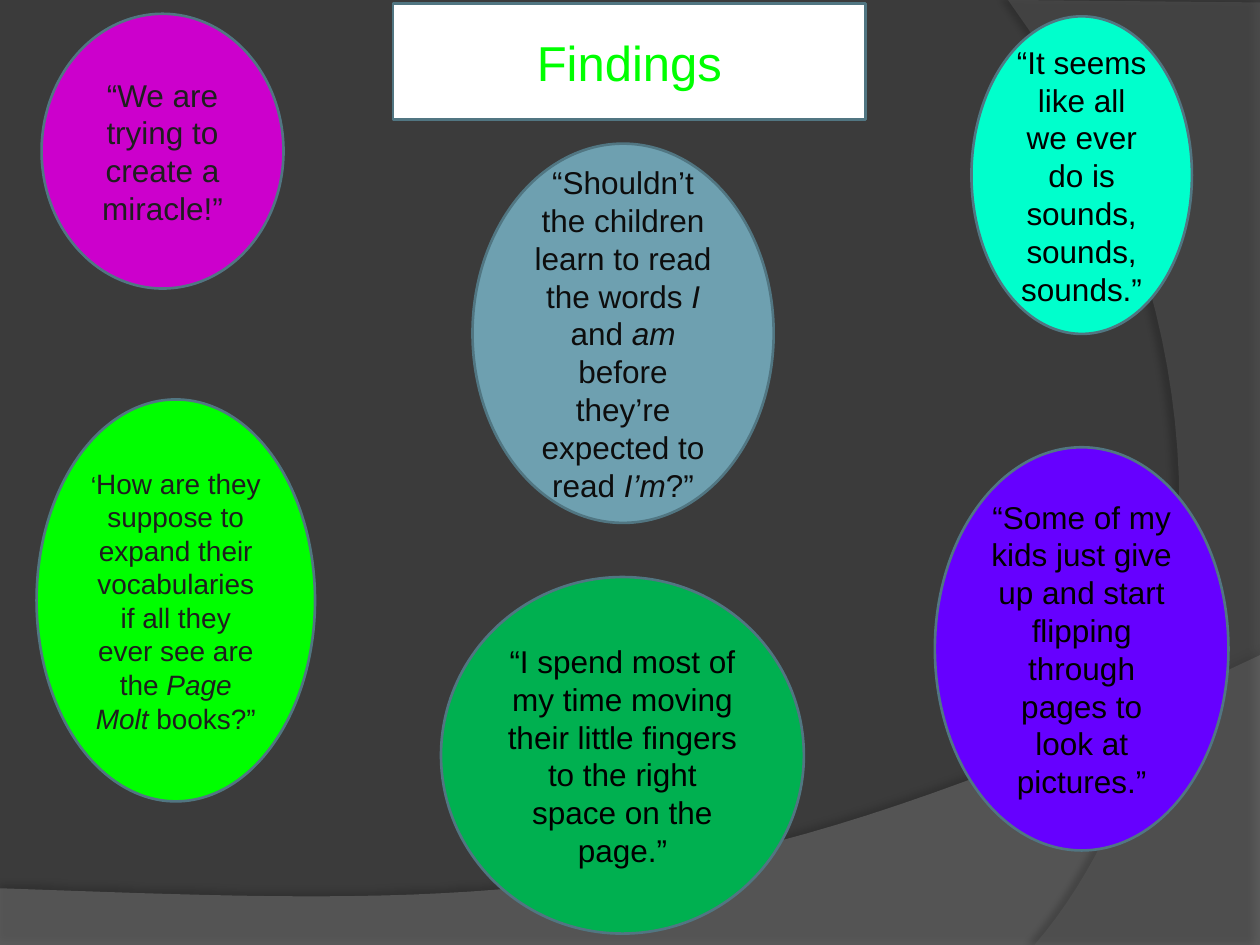
from lxml import etree
from pptx import Presentation
from pptx.dml.color import RGBColor
from pptx.enum.shapes import MSO_SHAPE
from pptx.enum.text import MSO_ANCHOR, PP_ALIGN
from pptx.oxml.ns import qn
from pptx.util import Inches, Pt

CIRCLE = MSO_SHAPE.FLOWCHART_CONNECTOR
MIDDLE = MSO_ANCHOR.MIDDLE
CENTER = PP_ALIGN.CENTER
FONT = "Arial"
TITLE_ONLY = 5
CURVE_STEPS = 40

COLORS = {
    "background": "3B3B3B", "wave": "7F7F7F", "arc": "5E5E5E",
    "shadow": "000000", "outline": "517682", "white": "FFFFFF",
    "magenta": "CC00CC", "aqua": "00FFCC", "steel": "6EA0B0",
    "lime": "00FF00", "green": "00B050", "violet": "6600FF",
    "black": "000000", "charcoal": "1E1E1E", "ink": "0D0D0D",
}

# Box, fill, text colour, and runs of (text, size, italic)
QUOTES = [
    ((0.33, 0.11, 1.92, 2.18), "magenta", "charcoal",
     [("“We are trying to create a miracle!”", 18, False)]),
    ((7.71, 0.13, 1.75, 2.52), "aqua", "black",
     [("“It seems like all we ever do is sounds, sounds, sounds.”", 18, False)]),
    ((3.75, 1.14, 2.39, 3.01), "steel", "ink",
     [("“Shouldn’t the children learn to read the words ", 18, False),
      ("I ", 18, True), ("and ", 18, False), ("am", 18, True),
      (" before they’re expected to read ", 18, False),
      ("I’m", 18, True), ("?”", 18, False)]),
    ((0.29, 3.17, 2.21, 3.19), "lime", "charcoal",
     [("‘", 14, False),
      ("How are they suppose to expand their vocabularies if all they "
       "ever see are the ", 16, False),
      ("Page Molt ", 16, True), ("books?”", 16, False)]),
    ((3.5, 4.58, 2.88, 2.83), "green", "black",
     [("“I spend most of my time moving their little fingers to the right "
       "space on the page.”", 18, False)]),
    ((7.42, 3.55, 2.33, 3.2), "violet", "black",
     [("“Some of my kids just give up and start flipping through pages to "
       "look at pictures.”", 18, False)]),
]


def rgb(name):
    return RGBColor.from_string(COLORS[name])


def paint(sp, fill):
    sp.fill.solid()
    sp.fill.fore_color.rgb = rgb(fill)
    sp.line.color.rgb = rgb("outline")
    sp.line.width = Pt(1.5)


def set_alpha(color, percent):
    etree.SubElement(color, qn("a:alpha"), val=str(percent * 1000))


def curve(p0, p1, p2, p3):
    """Points along a cubic Bezier curve, without its start."""
    points = []
    for i in range(1, CURVE_STEPS + 1):
        t = i / CURVE_STEPS
        u = 1 - t
        points.append(tuple(
            u**3 * a + 3 * u**2 * t * b + 3 * u * t**2 * c + t**3 * d
            for a, b, c, d in zip(p0, p1, p2, p3)))
    return points


def add_swoosh(s, points, fill, opacity, shadow_opacity, distance, angle):
    start, *rest = [(Inches(x), Inches(y)) for x, y in points]
    builder = s.shapes.build_freeform(*start, scale=1.0)
    builder.add_line_segments(rest, close=True)
    sp = builder.convert_to_shape()
    sp.fill.solid()
    sp.fill.fore_color.rgb = rgb(fill)
    sp.line.fill.background()
    props = sp._element.spPr
    set_alpha(props.find(qn("a:solidFill"))[0], opacity)
    effects = etree.SubElement(props, qn("a:effectLst"))
    shadow = etree.SubElement(
        effects, qn("a:outerShdw"), blurRad=str(Pt(4)),
        dist=str(Pt(distance)), dir=str(angle * 60000),
        algn="ctr", rotWithShape="0")
    color = etree.SubElement(shadow, qn("a:srgbClr"), val=COLORS["shadow"])
    set_alpha(color, shadow_opacity)


def add_backdrop(s, w, h):
    s.background.fill.solid()
    s.background.fill.fore_color.rgb = rgb("background")
    wave = [(0, h), (w, h), (w, 5.2)]
    wave += curve((w, 5.2), (5.59, 7.29), (3.91, 7.19), (0, 7.05))
    add_swoosh(s, wave, "wave", 45, 35, 3.5, 270)
    arc = [(w, 0.02), (w, h), (8.21, h)]
    arc += curve((8.21, h), (9.35, 6.19), (10.18, 3), (8, 0))
    add_swoosh(s, arc, "arc", 40, 45, 4, 180)


def add_title(s, box, text):
    sp = s.shapes.title
    sp.left, sp.top, sp.width, sp.height = map(Inches, box)
    paint(sp, "white")
    sp.text_frame.text = text
    sp.text_frame.vertical_anchor = MIDDLE
    p = sp.text_frame.paragraphs[0]
    p.alignment = CENTER
    p.font.name, p.font.size = FONT, Pt(28)
    p.font.color.rgb = rgb("lime")


def add_quote(s, box, fill, text_color, runs):
    sp = s.shapes.add_shape(CIRCLE, *map(Inches, box))
    sp.shadow.inherit = False
    paint(sp, fill)
    tf = sp.text_frame
    tf.word_wrap = True
    tf.vertical_anchor = MIDDLE
    p = tf.paragraphs[0]
    p.alignment = CENTER
    p.font.name = FONT
    p.font.color.rgb = rgb(text_color)
    for text, size, italic in runs:
        r = p.add_run()
        r.text = text
        r.font.size = Pt(size)
        r.font.italic = italic
        r.font.color.rgb = rgb(text_color)


def main():
    prs = Presentation()
    prs.slide_width, prs.slide_height = Inches(10), Inches(7.5)
    s = prs.slides.add_slide(prs.slide_layouts[TITLE_ONLY])
    add_backdrop(s, 10, 7.5)
    add_title(s, (3.12, 0.03, 3.75, 0.92), "Findings")
    for quote in QUOTES:
        add_quote(s, *quote)
    prs.save("out.pptx")


if __name__ == "__main__":
    main()
